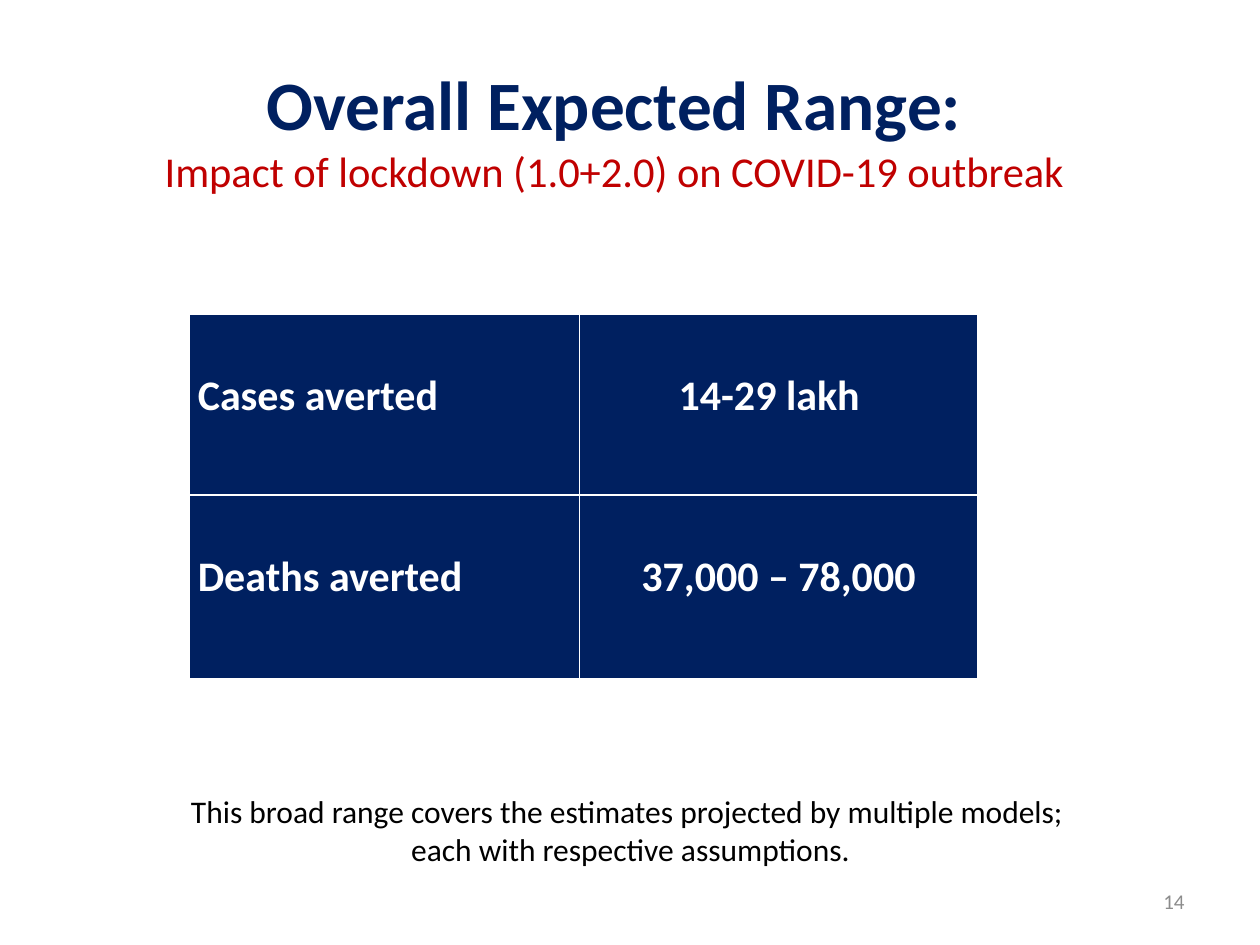
from lxml.etree import SubElement
from pptx import Presentation
from pptx.dml.color import RGBColor
from pptx.enum.text import MSO_ANCHOR, PP_ALIGN
from pptx.oxml.ns import qn
from pptx.util import Inches, Pt

THEME = {
    "font": "Calibri",
    "heading": {"size": 39.6, "color": "002060", "bold": True},
    "subheading": {"size": 24.3, "color": "C00000", "bold": False},
    "cell": {"size": 24, "color": "FFFFFF", "bold": True},
    "note": {"size": 18, "color": "000000", "bold": False},
    "number": {"size": 12, "color": "8C8C8C", "bold": False},
    "cell_fill": "002060",
    "border": "FFFFFF",
}
SLIDE_SIZE = (10, 7.5)

# Each text: box, alignment, anchor, paragraphs; a paragraph is a list of
# (style, line) pairs separated by line breaks.
TEXTS = [
    ((0.51, 0.68, 8.73, 0.68), PP_ALIGN.CENTER, MSO_ANCHOR.MIDDLE,
     [[("heading", "Overall Expected Range:"),
       ("subheading", "Impact of lockdown (1.0+2.0) on COVID-19 outbreak")]]),
    ((0.7, 6.24, 8.61, 0.71), PP_ALIGN.CENTER, MSO_ANCHOR.TOP,
     [[("note", "This broad range covers the estimates projected by multiple models; ")],
      [("note", "each with respective assumptions.")]]),
    ((7.17, 6.95, 2.33, 0.4), PP_ALIGN.RIGHT, MSO_ANCHOR.MIDDLE,
     [[("number", "14")]]),
]

# Each cell: text and right margin
ESTIMATES = [
    [("Cases averted", 0.07), ("14-29 lakh", 0.22)],
    [("Deaths averted", 0.07), ("37,000 – 78,000", 0.07)],
]
TABLE_ORIGIN = (1.5, 2.49)
COLUMN_WIDTHS = (3.1, 3.16)
ROW_HEIGHTS = (1.44, 1.46)
COLUMN_ALIGNS = (PP_ALIGN.LEFT, PP_ALIGN.CENTER)
CELL_MARGINS = {"margin_left": 0.07, "margin_top": 0.45, "margin_bottom": 0.04}


def add_run(paragraph, line, style):
    run = paragraph.add_run()
    run.text = line
    look = THEME[style]
    for key, value in {"name": THEME["font"], "size": Pt(look["size"]),
                       "bold": look["bold"]}.items():
        setattr(run.font, key, value)
    run.font.color.rgb = RGBColor.from_string(look["color"])


def add_text(slide, box, align, anchor, paragraphs):
    frame = slide.shapes.add_textbox(*map(Inches, box)).text_frame
    frame.word_wrap = True
    frame.vertical_anchor = anchor
    for index, lines in enumerate(paragraphs):
        paragraph = frame.add_paragraph() if index else frame.paragraphs[0]
        paragraph.alignment = align
        for position, (style, line) in enumerate(lines):
            if position:
                paragraph.add_line_break()
            add_run(paragraph, line, style)


def set_borders(cell, width=1):
    properties = cell._tc.get_or_add_tcPr()
    for position, side in enumerate(("a:lnL", "a:lnR", "a:lnT", "a:lnB")):
        border = SubElement(properties, qn(side), w=str(Pt(width)))
        properties.insert(position, border)
        fill = SubElement(border, qn("a:solidFill"))
        SubElement(fill, qn("a:srgbClr"), val=THEME["border"])


def add_estimates(slide):
    size = (sum(COLUMN_WIDTHS), sum(ROW_HEIGHTS))
    table = slide.shapes.add_table(
        len(ROW_HEIGHTS), len(COLUMN_WIDTHS),
        *map(Inches, TABLE_ORIGIN + size)).table
    for column, width in zip(table.columns, COLUMN_WIDTHS):
        column.width = Inches(width)
    for row, height, estimates in zip(table.rows, ROW_HEIGHTS, ESTIMATES):
        row.height = Inches(height)
        for cell, (text, right), align in zip(row.cells, estimates, COLUMN_ALIGNS):
            for key, value in {**CELL_MARGINS, "margin_right": right}.items():
                setattr(cell, key, Inches(value))
            cell.fill.solid()
            cell.fill.fore_color.rgb = RGBColor.from_string(THEME["cell_fill"])
            set_borders(cell)
            paragraph = cell.text_frame.paragraphs[0]
            paragraph.alignment = align
            add_run(paragraph, text, "cell")


def main():
    deck = Presentation()
    deck.slide_width, deck.slide_height = map(Inches, SLIDE_SIZE)
    slide = deck.slides.add_slide(deck.slide_layouts[6])
    add_estimates(slide)
    for text in TEXTS:
        add_text(slide, *text)
    deck.save("out.pptx")


if __name__ == "__main__":
    main()
